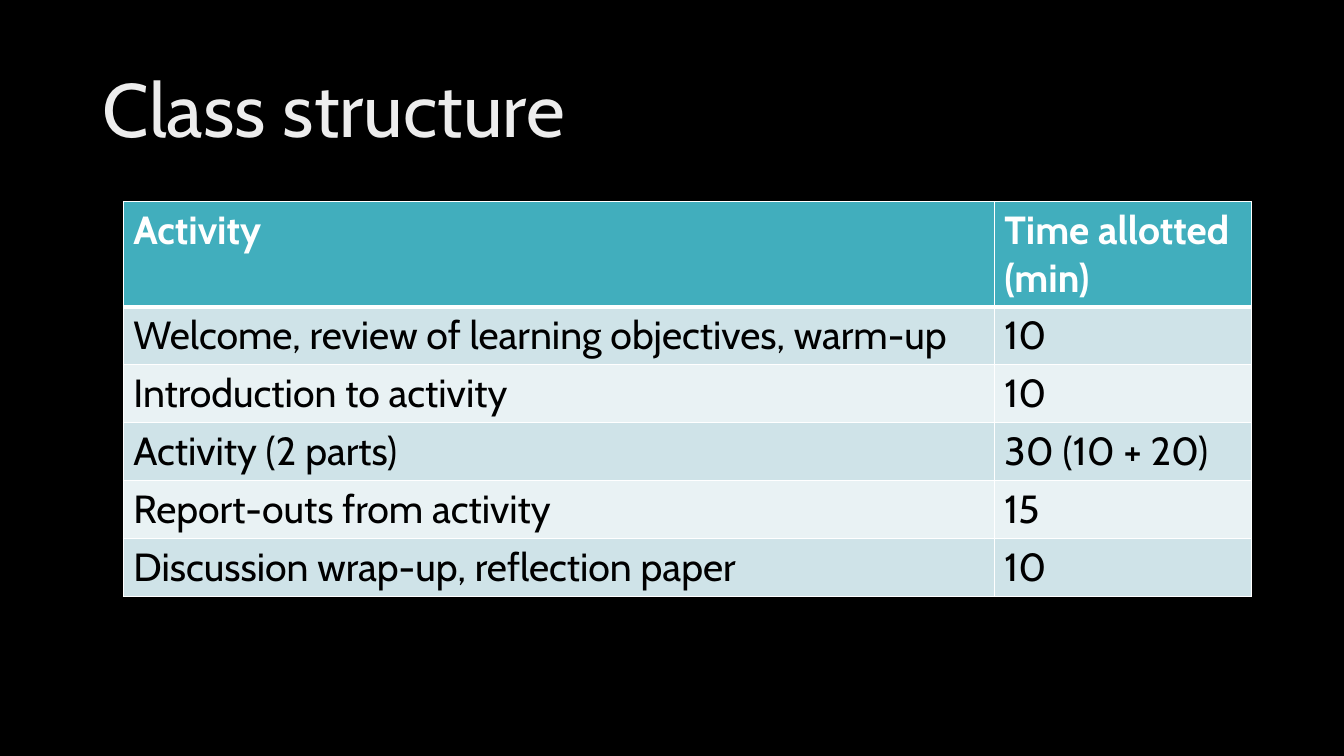
from pptx import Presentation
from pptx.dml.color import RGBColor
from pptx.enum.text import MSO_ANCHOR, PP_ALIGN
from pptx.oxml.ns import qn
from pptx.util import Cm, Pt
from lxml import etree

LEFT, TOP, MIDDLE = PP_ALIGN.LEFT, MSO_ANCHOR.TOP, MSO_ANCHOR.MIDDLE

TITLE = "Class structure"
ROWS = [
    ("Activity", "Time allotted (min)"),
    ("Welcome, review of learning objectives, warm-up", "10"),
    ("Introduction to activity", "10"),
    ("Activity (2 parts)", "30 (10 + 20)"),
    ("Report-outs from activity", "15"),
    ("Discussion wrap-up, reflection paper", "10"),
]
WIDTHS = [21.95, 6.48]
HEAD, BODY = 2.64, 1.46
FONT = "Cabin"
COLORS = {
    "back": "000000", "title": "EDEDED", "head": "41AEBD",
    "dark": "CFE3E8", "light": "E9F2F4", "line": "FFFFFF",
    "white": "FFFFFF", "black": "000000",
}


def color(name):
    return RGBColor.from_string(COLORS[name])


def write(frame, text, size, ink, bold=False):
    par = frame.paragraphs[0]
    par.alignment = LEFT
    run = par.add_run()
    run.text = text
    font = run.font
    font.name, font.size, font.bold = FONT, Pt(size), bold
    font.color.rgb = color(ink)
    return par


def border(cell, side, width):
    props = cell._tc.get_or_add_tcPr()
    line = etree.SubElement(props, qn("a:ln" + side), w=str(Pt(width)))
    fill = etree.SubElement(line, qn("a:solidFill"))
    etree.SubElement(fill, qn("a:srgbClr"), val=COLORS["line"])


def main():
    deck = Presentation()
    deck.slide_width, deck.slide_height = Cm(33.87), Cm(19.05)
    slide = deck.slides.add_slide(deck.slide_layouts[5])
    slide.background.fill.solid()
    slide.background.fill.fore_color.rgb = color("back")

    # Title
    title = slide.shapes.title
    title.left, title.top = Cm(2.33), Cm(1.01)
    title.width, title.height = Cm(29.21), Cm(3.68)
    title.text_frame.word_wrap = True
    title.text_frame.vertical_anchor = MIDDLE
    write(title.text_frame, TITLE, 54, "title").line_spacing = 0.9

    # Table grid
    high = HEAD + BODY * (len(ROWS) - 1)
    table = slide.shapes.add_table(
        len(ROWS), len(WIDTHS), Cm(3.11), Cm(5.08),
        Cm(sum(WIDTHS)), Cm(high)).table
    for col, width in zip(table.columns, WIDTHS):
        col.width = Cm(width)

    # Cells: header, then bands in turn
    for r, row in enumerate(ROWS):
        head = r == 0
        table.rows[r].height = Cm(HEAD if head else BODY)
        band = "head" if head else "dark" if r % 2 else "light"
        for c, text in enumerate(row):
            cell = table.cell(r, c)
            cell.vertical_anchor = TOP
            for side in "LRTB":
                thick = (r, side) in ((0, "B"), (1, "T"))
                border(cell, side, 3 if thick else 1)
            cell.fill.solid()
            cell.fill.fore_color.rgb = color(band)
            write(cell.text_frame, text, 28,
                  "white" if head else "black", head)

    deck.save("out.pptx")


if __name__ == "__main__":
    main()
